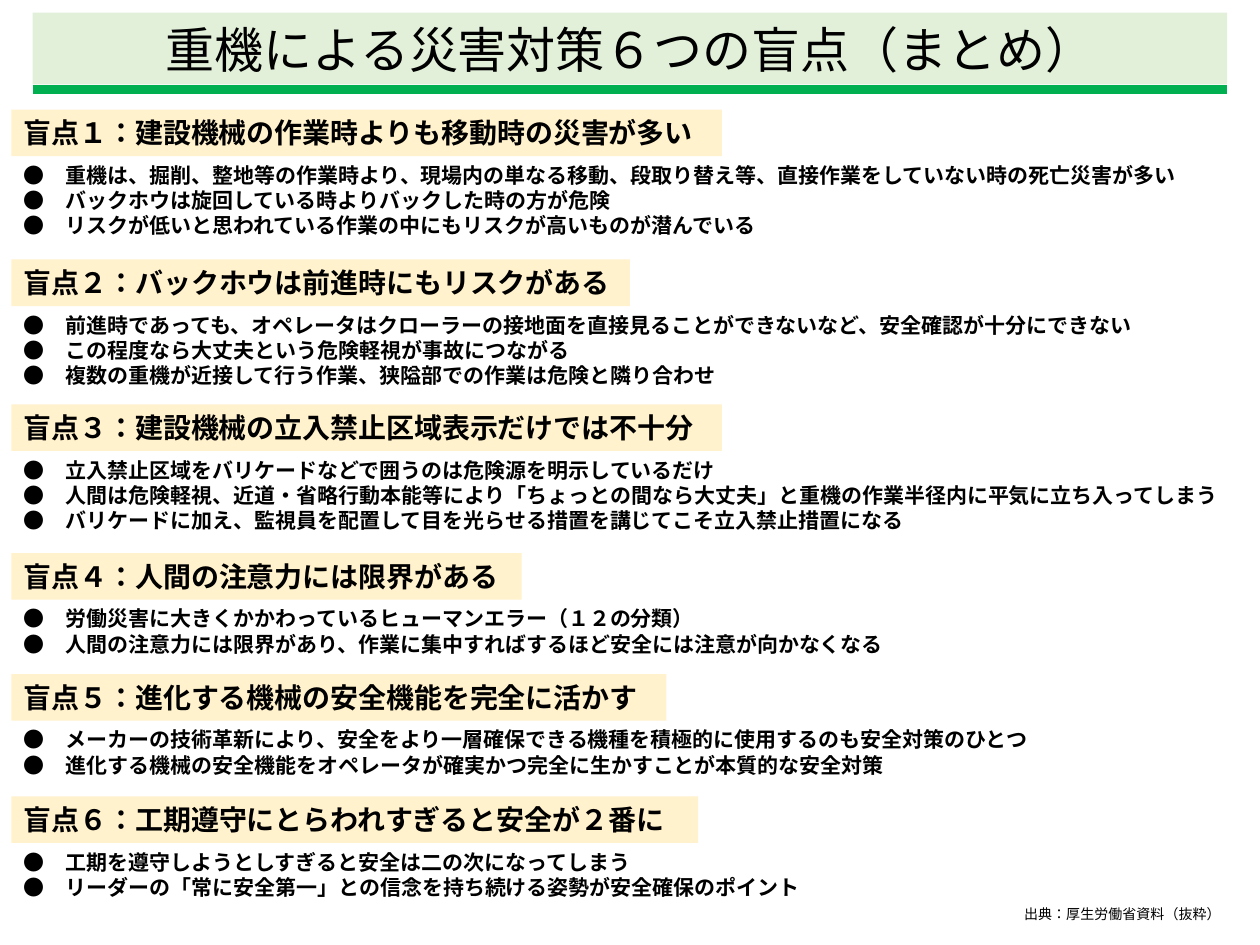
from dataclasses import dataclass

from lxml.etree import SubElement
from pptx import Presentation
from pptx.dml.color import RGBColor
from pptx.enum.lang import MSO_LANGUAGE_ID
from pptx.enum.shapes import MSO_CONNECTOR, MSO_SHAPE
from pptx.enum.text import MSO_ANCHOR, MSO_AUTO_SIZE, PP_ALIGN
from pptx.oxml.ns import qn
from pptx.util import Inches, Pt

FONT = "Noto Sans CJK JP"
COLORS = {
    "text": "000000",
    "title_band": "E2F0D9",
    "title_rule": "00B050",
    "heading_band": "FFF2CC",
}
LEFT = 0.09
BODY_WIDTH = 9.76
HEADING_HEIGHT = 0.37
LINE_HEIGHT = 0.2
BODY_PADDING = 0.1
BULLET = "●　"


@dataclass(frozen=True)
class BlindSpot:
    top: float
    heading_width: float
    heading: str
    points: tuple[str, ...]


BLIND_SPOTS = (
    BlindSpot(0.87, 5.64, "建設機械の作業時よりも移動時の災害が多い", (
        "重機は、掘削、整地等の作業時より、現場内の単なる移動、段取り替え等、直接作業をしていない時の死亡災害が多い",
        "バックホウは旋回している時よりバックした時の方が危険",
        "リスクが低いと思われている作業の中にもリスクが高いものが潜んでいる",
    )),
    BlindSpot(2.06, 4.91, "バックホウは前進時にもリスクがある", (
        "前進時であっても、オペレータはクローラーの接地面を直接見ることができないなど、安全確認が十分にできない",
        "この程度なら大丈夫という危険軽視が事故につながる",
        "複数の重機が近接して行う作業、狭隘部での作業は危険と隣り合わせ",
    )),
    BlindSpot(3.21, 5.64, "建設機械の立入禁止区域表示だけでは不十分", (
        "立入禁止区域をバリケードなどで囲うのは危険源を明示しているだけ",
        "人間は危険軽視、近道・省略行動本能等により「ちょっとの間なら大丈夫」と重機の作業半径内に平気に立ち入ってしまう",
        "バリケードに加え、監視員を配置して目を光らせる措置を講じてこそ立入禁止措置になる",
    )),
    BlindSpot(4.39, 4.05, "人間の注意力には限界がある", (
        "労働災害に大きくかかわっているヒューマンエラー（１２の分類）",
        "人間の注意力には限界があり、作業に集中すればするほど安全には注意が向かなくなる",
    )),
    BlindSpot(5.35, 5.2, "進化する機械の安全機能を完全に活かす", (
        "メーカーの技術革新により、安全をより一層確保できる機種を積極的に使用するのも安全対策のひとつ",
        "進化する機械の安全機能をオペレータが確実かつ完全に生かすことが本質的な安全対策",
    )),
    BlindSpot(6.32, 5.45, "工期遵守にとらわれすぎると安全が２番に", (
        "工期を遵守しようとしすぎると安全は二の次になってしまう",
        "リーダーの「常に安全第一」との信念を持ち続ける姿勢が安全確保のポイント",
    )),
)


def rgb(role: str) -> RGBColor:
    return RGBColor.from_string(COLORS[role])


def write_lines(shape, lines, size: float, bold: bool = False,
                align=PP_ALIGN.LEFT, anchor=MSO_ANCHOR.TOP,
                auto_size=MSO_AUTO_SIZE.SHAPE_TO_FIT_TEXT) -> None:
    frame = shape.text_frame
    frame.word_wrap = True
    frame.auto_size = auto_size
    frame.vertical_anchor = anchor
    for index, line in enumerate(lines):
        paragraph = frame.add_paragraph() if index else frame.paragraphs[0]
        paragraph.alignment = align
        run = paragraph.add_run()
        run.text = line
        run.font.size = Pt(size)
        run.font.bold = bold
        run.font.language_id = MSO_LANGUAGE_ID.JAPANESE
        run.font.color.rgb = rgb("text")
        run.font.name = FONT
        SubElement(run.font._element, qn("a:ea")).set("typeface", FONT)


def add_title(slide, text: str) -> None:
    title = slide.shapes.title
    title.left, title.top = Inches(0.26), Inches(0.1)
    title.width, title.height = Inches(9.48), Inches(0.57)
    title.fill.solid()
    title.fill.fore_color.rgb = rgb("title_band")
    write_lines(title, [text], 28, align=PP_ALIGN.CENTER,
                anchor=MSO_ANCHOR.MIDDLE, auto_size=MSO_AUTO_SIZE.NONE)

    rule = slide.shapes.add_connector(
        MSO_CONNECTOR.STRAIGHT, Inches(0.26), Inches(0.71), Inches(9.74), Inches(0.71))
    rule.line.color.rgb = rgb("title_rule")
    rule.line.width = Pt(5.5)
    SubElement(rule._element.spPr, qn("a:effectLst"))


def add_blind_spot(slide, number: str, spot: BlindSpot) -> None:
    band = slide.shapes.add_shape(
        MSO_SHAPE.RECTANGLE, Inches(LEFT), Inches(spot.top),
        Inches(spot.heading_width), Inches(HEADING_HEIGHT))
    band.shadow.inherit = False
    band.fill.solid()
    band.fill.fore_color.rgb = rgb("heading_band")
    band.line.fill.background()
    write_lines(band, [f"盲点{number}：{spot.heading}"], 16, bold=True)

    body = slide.shapes.add_textbox(
        Inches(LEFT), Inches(spot.top + HEADING_HEIGHT), Inches(BODY_WIDTH),
        Inches(BODY_PADDING + LINE_HEIGHT * len(spot.points)))
    write_lines(body, [BULLET + point for point in spot.points], 12, bold=True)


def main() -> None:
    deck = Presentation()
    deck.slide_width, deck.slide_height = Inches(10), Inches(7.5)
    slide = deck.slides.add_slide(deck.slide_layouts.get_by_name("Title Only"))

    add_title(slide, "重機による災害対策６つの盲点（まとめ）")
    for number, spot in zip("１２３４５６", BLIND_SPOTS):
        add_blind_spot(slide, number, spot)

    source = slide.shapes.add_textbox(
        Inches(8.03), Inches(7.14), Inches(1.87), Inches(0.24))
    write_lines(source, ["出典：厚生労働省資料（抜粋）"], 8)

    deck.save("out.pptx")


if __name__ == "__main__":
    main()
